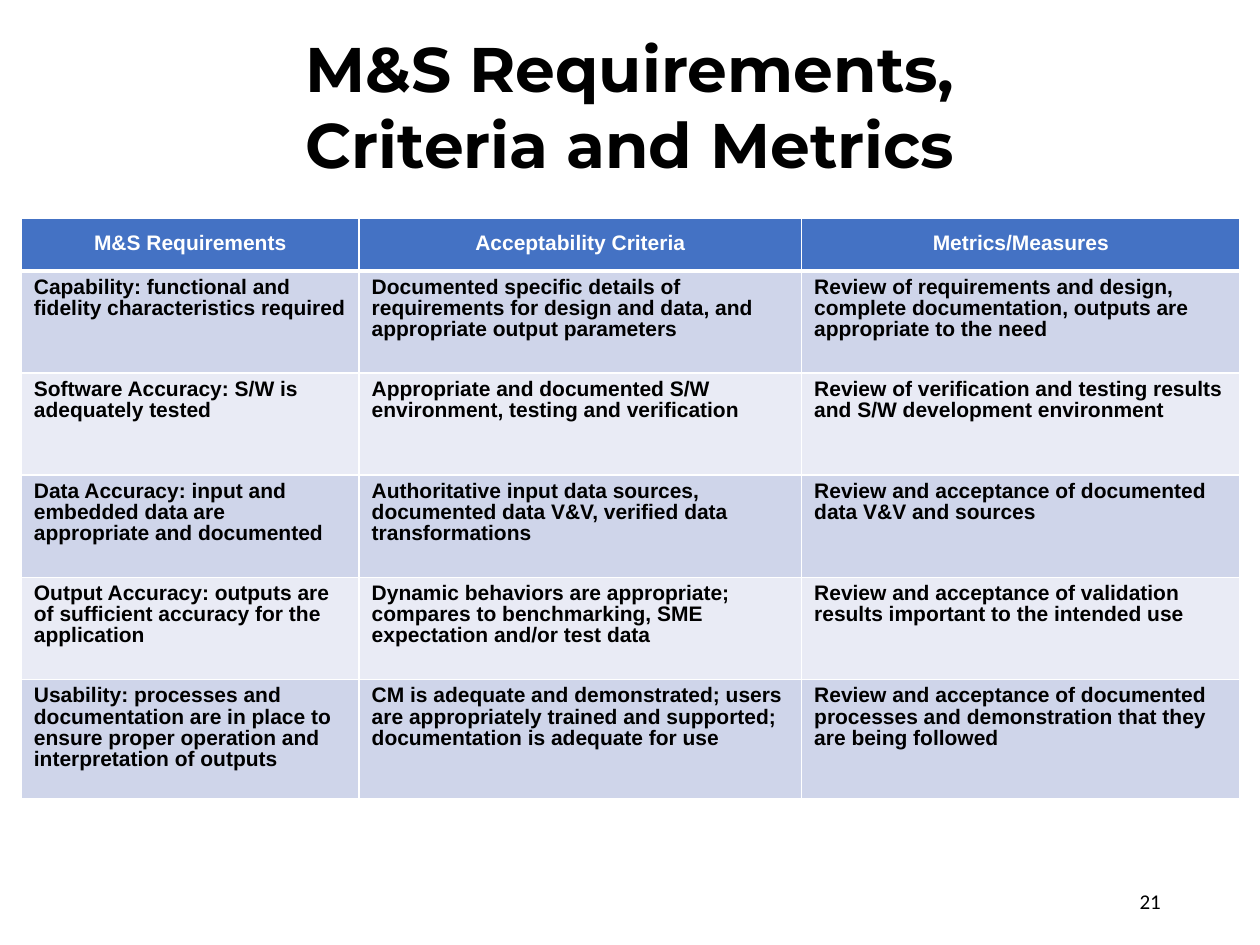
from lxml import etree
from pptx import Presentation
from pptx import util as u
from pptx.dml.color import RGBColor
from pptx.enum import text
from pptx.oxml import ns

TITLE = "M&S Requirements,\vCriteria and Metrics"
PAGE_NUMBER = "21"
HEADINGS = ("M&S Requirements", "Acceptability Criteria", "Metrics/Measures")
REQUIREMENTS = [
    ("Capability: functional and fidelity characteristics required",
     "Documented specific details of requirements for design and data, and appropriate output parameters",
     "Review of requirements and design, complete documentation, outputs are appropriate to the need"),
    ("Software Accuracy: S/W is adequately tested",
     "Appropriate and documented S/W environment, testing and verification",
     "Review of verification and testing results and S/W development environment"),
    ("Data Accuracy: input and embedded data are appropriate and documented",
     "Authoritative input data sources, documented data V&V, verified data transformations",
     "Review and acceptance of documented data V&V and sources"),
    ("Output Accuracy: outputs are of sufficient accuracy for the application",
     "Dynamic behaviors are appropriate; compares to benchmarking, SME expectation and/or test data",
     "Review and acceptance of validation results important to the intended use"),
    ("Usability: processes and documentation are in place to ensure proper operation and interpretation of outputs",
     "CM is adequate and demonstrated; users are appropriately trained and supported; documentation is adequate for use",
     "Review and acceptance of documented processes and demonstration that they are being followed"),
]

THEME = {
    "title_font": "Montserrat", "table_font": "Arial", "number_font": "Calibri",
    "title_size": 36, "small_size": 12,
    "ink": "000000", "paper": "FFFFFF", "header": "4472C4",
    "bands": ("CFD5EA", "E9EBF5"),
    "thin": 1, "thick": 3,
}
COLUMN_WIDTHS = (6.81, 8.92, 8.84)
ROW_HEIGHTS = (1.07, 2.06, 2.06, 2.06, 2.06, 2.41)
TABLE_LEFT, TABLE_TOP = 0.43, 4.39
ALIGN, ANCHOR = text.PP_ALIGN, text.MSO_ANCHOR


def write(frame, words, *, font, size, color=THEME["ink"], bold=False,
          align=ALIGN.LEFT, anchor=ANCHOR.TOP, spacing=None, after=None):
    frame.word_wrap = True
    frame.vertical_anchor = anchor
    para = frame.paragraphs[0]
    para.text = words
    para.alignment = align
    para.line_spacing = spacing
    if after is not None:
        para.space_after = u.Pt(after)
    for span in para.runs:
        span.font.name = font
        span.font.size = u.Pt(size)
        span.font.bold = bold
        span.font.color.rgb = RGBColor.from_string(color)


def place(box, left, top, width, height):
    box.left, box.top = u.Cm(left), u.Cm(top)
    box.width, box.height = u.Cm(width), u.Cm(height)


def add_borders(cell, top, bottom):
    properties = cell._tc.get_or_add_tcPr()
    widths = {"lnL": THEME["thin"], "lnR": THEME["thin"], "lnT": top, "lnB": bottom}
    for index, (side, width) in enumerate(widths.items()):
        line = etree.Element(ns.qn(f"a:{side}"), w=str(u.Pt(width)))
        fill = etree.SubElement(line, ns.qn("a:solidFill"))
        etree.SubElement(fill, ns.qn("a:srgbClr"), val=THEME["paper"])
        properties.insert(index, line)


def add_requirements_table(page):
    rows = [HEADINGS, *REQUIREMENTS]
    table = page.shapes.add_table(
        len(rows), len(HEADINGS), u.Cm(TABLE_LEFT), u.Cm(TABLE_TOP),
        u.Cm(sum(COLUMN_WIDTHS)), u.Cm(sum(ROW_HEIGHTS))).table
    for column, width in zip(table.columns, COLUMN_WIDTHS):
        column.width = u.Cm(width)
    for number, (row, height, values) in enumerate(zip(table.rows, ROW_HEIGHTS, rows)):
        row.height = u.Cm(height)
        header = number == 0
        band = THEME["header"] if header else THEME["bands"][(number - 1) % 2]
        for cell, words in zip(row.cells, values):
            write(cell.text_frame, words, font=THEME["table_font"],
                  size=THEME["small_size"], bold=True, spacing=0.9, after=6,
                  color=THEME["paper"] if header else THEME["ink"],
                  align=ALIGN.CENTER if header else ALIGN.LEFT)
            cell.vertical_anchor = ANCHOR.MIDDLE if header else ANCHOR.TOP
            cell.fill.solid()
            cell.fill.fore_color.rgb = RGBColor.from_string(band)
            add_borders(cell, top=THEME["thick" if number == 1 else "thin"],
                        bottom=THEME["thick" if header else "thin"])


def main():
    deck = Presentation()
    deck.slide_width, deck.slide_height = u.Cm(25.4), u.Cm(19.05)
    page = deck.slides.add_slide(deck.slide_layouts[5])
    add_requirements_table(page)

    title = page.shapes.title
    place(title, 1.75, 0.46, 21.9, 3.33)
    write(title.text_frame, TITLE, font=THEME["title_font"], size=THEME["title_size"],
          bold=True, align=ALIGN.CENTER, anchor=ANCHOR.MIDDLE)
    title.text_frame.auto_size = text.MSO_AUTO_SIZE.SHAPE_TO_FIT_TEXT

    number_box = page.shapes.add_textbox(0, 0, 0, 0)
    place(number_box, 17.93, 17.65, 5.72, 1.02)
    write(number_box.text_frame, PAGE_NUMBER, font=THEME["number_font"],
          size=THEME["small_size"], align=ALIGN.RIGHT, anchor=ANCHOR.MIDDLE)
    deck.save("out.pptx")


if __name__ == "__main__":
    main()
